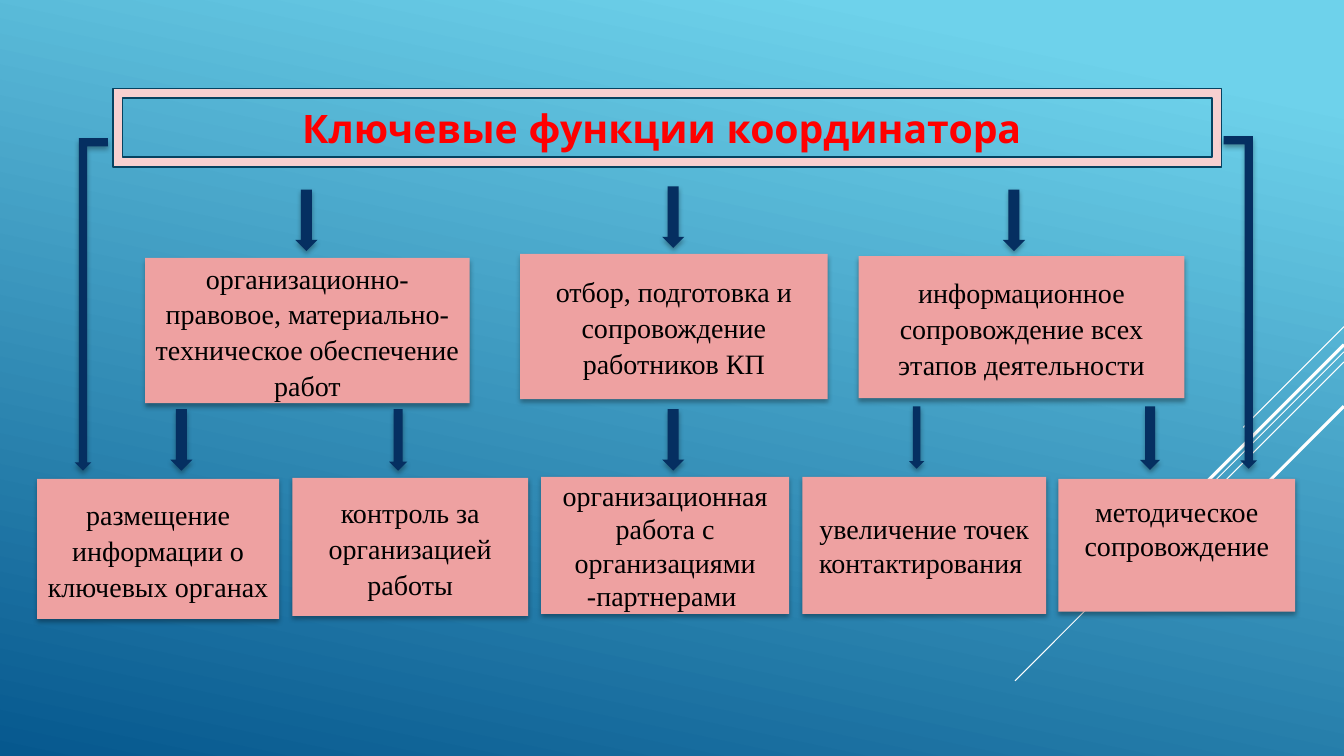
from lxml import etree
from pptx import Presentation
from pptx.dml.color import RGBColor
from pptx.enum.shapes import MSO_CONNECTOR, MSO_SHAPE
from pptx.enum.text import MSO_ANCHOR, PP_ALIGN
from pptx.oxml import parse_xml
from pptx.oxml.ns import nsdecls, qn
from pptx.util import Pt

SKY = RGBColor(0x6E, 0xD2, 0xEB)
DEEP_BLUE = RGBColor(0x06, 0x58, 0x8E)
NAVY = RGBColor(0x05, 0x2F, 0x61)
OUTLINE = RGBColor(0x05, 0x43, 0x61)
PALE_PINK = RGBColor(0xF7, 0xD0, 0xD0)
PINK = RGBColor(0xEE, 0xA1, 0xA1)
RED = RGBColor(0xFF, 0, 0)
BLACK = RGBColor(0, 0, 0)
WHITE = RGBColor(0xFF, 0xFF, 0xFF)

SHADOW = (f'<a:effectLst {nsdecls("a")}><a:outerShdw blurRad="{Pt(3.5)}" dist="{Pt(2.2)}" '
          'dir="5400000" algn="ctr" rotWithShape="0"><a:srgbClr val="000000">'
          '<a:alpha val="32000"/></a:srgbClr></a:outerShdw></a:effectLst>')


def add_shadowed(kind, box, color):
    """Add a borderless filled shape with a soft shadow below it."""
    sp = s.shapes.add_shape(kind, *map(Pt, box))
    sp.fill.solid()
    sp.fill.fore_color.rgb = color
    sp.line.fill.background()
    sp._element.spPr.append(parse_xml(SHADOW))
    return sp


def set_text(sp, text, font, size, color):
    tf = sp.text_frame
    tf.word_wrap = True
    tf.vertical_anchor = MSO_ANCHOR.MIDDLE
    p = tf.paragraphs[0]
    p.text = text
    p.alignment = PP_ALIGN.CENTER
    p.font.name = font
    p.font.size = Pt(size)
    p.font.color.rgb = color
    return p


prs = Presentation()
prs.slide_width, prs.slide_height = Pt(960), Pt(540)
s = prs.slides.add_slide(prs.slide_layouts[6])

fill = s.background.fill
fill.gradient()
fill.gradient_angle = 258
for stop, position, color in zip(fill.gradient_stops, (0.1, 1), (SKY, DEEP_BLUE)):
    stop.position = position
    stop.color.rgb = color

# Diagonal rays from the right edge: start height, horizontal run, width
for top, run, width in [(233.3, 72, 0.75), (251.3, 235, 0.75), (258.5, 149, 0.75),
                        (246.2, 137.5, 2.25), (290.2, 100, 2.25)]:
    ray = s.shapes.add_connector(MSO_CONNECTOR.STRAIGHT, Pt(960), Pt(top),
                                 Pt(960 - run), Pt(top + run))
    ray.line.color.rgb = WHITE
    ray.line.width = Pt(width)
    etree.SubElement(ray._element.spPr, qn("a:effectLst"))

title = s.shapes.add_shape(MSO_SHAPE.FRAME, Pt(80.6), Pt(63.2), Pt(792), Pt(56.2))
title.shadow.inherit = False
title.fill.solid()
title.fill.fore_color.rgb = PALE_PINK
title.line.color.rgb = OUTLINE
title.line.width = Pt(1.25)
p = set_text(title, "Ключевые функции координатора ", "Quicksand", 28, RED)
p.font.bold = True

# Boxes: left, top, width, height, text, line spacing, bottom inset
for *box, text, spacing, inset in [
    (103.7, 184.3, 231.8, 103.7,
     "организационно-правовое, материально-техническое обеспечение работ", 1.07, 3.6),
    (371.5, 181.4, 219.6, 103.7, "отбор, подготовка и сопровождение работников КП", 1.07, 3.6),
    (613.4, 182.9, 232.6, 101.5,
     "информационное сопровождение всех этапов деятельности", 1.07, 3.6),
    (26.6, 342, 172.8, 100.1, "размещение информации о ключевых органах ", 1.07, 3.6),
    (208.8, 341.3, 168.5, 98.6, "контроль за организацией работы", 1.07, 3.6),
    (386.6, 340.6, 177.1, 97.9,
     "организационная работа с организациями -партнерами ", 1, 3.6),
    (573.1, 340.6, 174.2, 97.9, "увеличение точек контактирования ", 1, 3.6),
    (756, 342, 169.2, 95, "методическое сопровождение", 1, 27.6),
]:
    sp = add_shadowed(MSO_SHAPE.RECTANGLE, box, PINK)
    p = set_text(sp, text, "Times New Roman", 20, BLACK)
    p.line_spacing = spacing
    if spacing > 1:
        p.space_after = Pt(8)
    sp.text_frame.margin_bottom = Pt(inset)

for box in [(211, 135.4, 15.8, 43.9), (473, 133.2, 15.8, 43.9), (716.4, 135.4, 15.8, 43.9),
            (121.7, 292.3, 15.8, 43.9), (277.9, 292.3, 13, 43.9), (473, 292.3, 15.8, 43.9),
            (649.4, 290.2, 10.8, 44.6), (814.3, 290.2, 14.4, 45.4)]:
    add_shadowed(MSO_SHAPE.DOWN_ARROW, box, NAVY)

# Long bent arrows from the title to the outer boxes
for left, top, flipped in [(53.3, 98.6, False), (874.1, 97.2, True)]:
    sp = add_shadowed(MSO_SHAPE.BENT_UP_ARROW, (left, top, 23.8, 237.6), NAVY)
    sp.rotation = 180
    if flipped:
        sp._element.spPr.xfrm.set("flipH", "1")

prs.save("out.pptx")
